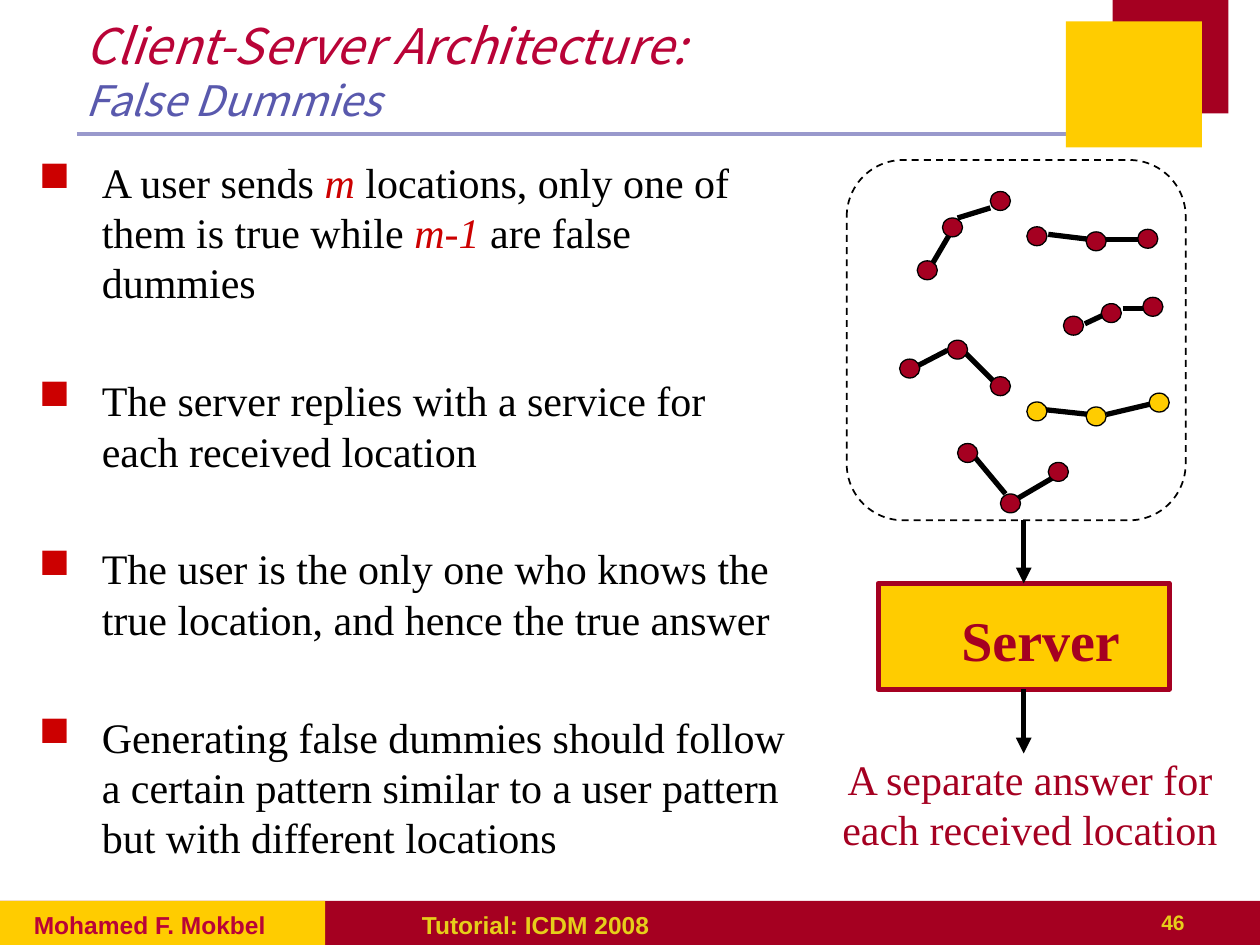
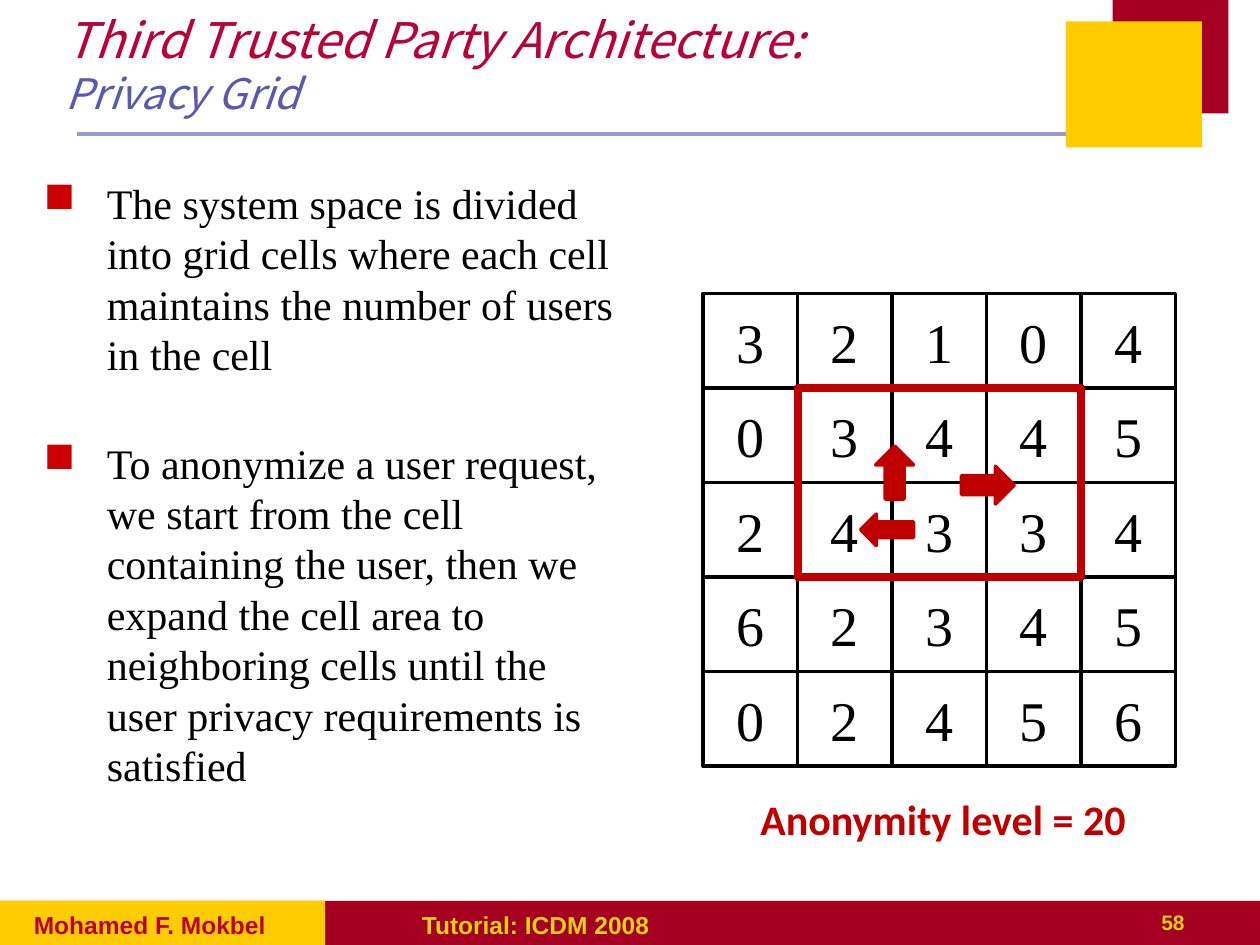
from dataclasses import dataclass
from typing import Optional

from lxml import etree
from pptx import Presentation
from pptx import util as u
from pptx.dml.color import RGBColor
from pptx.enum import dml, shapes, text
from pptx.oxml import ns

Inches, Pt = u.Inches, u.Pt
SHAPE, ALIGN, ANCHOR = shapes.MSO_SHAPE, text.PP_ALIGN, text.MSO_ANCHOR


@dataclass(frozen=True)
class Theme:
    crimson: str = "A50021"
    gold: str = "FFCC00"
    title: str = "B90337"
    subtitle: str = "5959AD"
    rule: str = "9999CC"
    footer: str = "E6CE1A"
    accent: str = "CC0000"
    cloak: str = "C00000"
    ink: str = "000000"
    title_font: str = "Noto Sans CJK KR"
    body_font: str = "Times New Roman"
    footer_font: str = "Arial"
    label_font: str = "Calibri"
    title_size: int = 28
    large_size: int = 32
    body_size: int = 24
    footer_size: int = 14
    number_size: int = 12


THEME = Theme()


@dataclass(frozen=True)
class Box:
    left: float
    top: float
    width: float
    height: float

    def lengths(self) -> list:
        return [Inches(v) for v in (self.left, self.top, self.width, self.height)]


@dataclass(frozen=True)
class Style:
    font: str
    size: int
    color: str
    bold: bool = False
    italic: bool = False


@dataclass(frozen=True)
class Stroke:
    color: str
    width: float
    dashed: bool = False


@dataclass(frozen=True)
class Trajectory:
    """Three reported positions (dot corners) and the two segments between them."""
    color: str
    dots: tuple
    segments: tuple


BODY = Style(THEME.body_font, THEME.body_size, THEME.ink)
VARIABLE = Style(THEME.body_font, THEME.body_size, THEME.accent, italic=True)
ANSWER = Style(THEME.body_font, THEME.body_size, THEME.crimson)
SERVER = Style(THEME.body_font, THEME.large_size, THEME.crimson, bold=True)
COUNT = Style(THEME.body_font, THEME.large_size, THEME.ink)
LEVEL = Style(THEME.label_font, THEME.body_size, THEME.cloak, bold=True)
TITLE = Style(THEME.title_font, THEME.title_size, THEME.title, italic=True)
SUBTITLE = Style(THEME.title_font, THEME.body_size, THEME.subtitle, italic=True)
AUTHOR = Style(THEME.footer_font, THEME.footer_size, THEME.title, bold=True)
VENUE = Style(THEME.footer_font, THEME.footer_size, THEME.footer, bold=True)
NUMBER = Style(THEME.footer_font, THEME.number_size, THEME.footer, bold=True)
PATH_STROKE = Stroke(THEME.ink, 3)

# Content
DUMMY_POINTS = [
    [("A user sends ", BODY), ("m", VARIABLE),
     (" locations, only one of them is true while ", BODY),
     ("m-1", VARIABLE), (" are false dummies", BODY)],
    [("The server replies with a service for each received location", BODY)],
    [("The user is the only one who knows the true location, "
      "and hence the true answer", BODY)],
    [("Generating false dummies should follow a certain pattern similar to "
      "a user pattern but with different locations", BODY)],
]
TRAJECTORIES = [
    Trajectory(THEME.crimson, ((7.28, 2.07), (7.48, 1.73), (7.86, 1.52)),
               ((7.39, 2.11, 7.56, 1.82), (7.6, 1.73, 7.86, 1.65))),
    Trajectory(THEME.crimson, ((8.15, 1.8), (8.62, 1.84), (9.03, 1.82)),
               ((8.32, 1.86, 8.65, 1.9), (8.74, 1.9, 9.07, 1.9))),
    Trajectory(THEME.crimson, ((8.44, 2.51), (8.74, 2.41), (9.07, 2.36)),
               ((8.61, 2.57, 8.78, 2.49), (8.91, 2.45, 9.07, 2.45))),
    Trajectory(THEME.crimson, ((7.14, 2.85), (7.52, 2.7), (7.86, 2.99)),
               ((7.27, 2.91, 7.52, 2.78), (7.6, 2.74, 7.9, 3.04))),
    Trajectory(THEME.gold, ((8.15, 3.19), (8.62, 3.23), (9.12, 3.12)),
               ((8.28, 3.25, 8.65, 3.29), (8.78, 3.29, 9.16, 3.2))),
    Trajectory(THEME.crimson, ((7.6, 3.52), (7.94, 3.92), (8.32, 3.67)),
               ((7.73, 3.62, 7.98, 3.92), (8.07, 3.96, 8.36, 3.79))),
]
GRID_POINTS = [
    (Box(0.25, 1.36, 4.8, 1.1),
     "The system space is divided into grid cells where each cell maintains "
     "the number of users in the cell"),
    (Box(0.25, 3.42, 4.8, 3.34),
     "To anonymize a user request, we start from the cell containing the user, "
     "then we expand the cell area to neighboring cells until the user privacy "
     "requirements is satisfied"),
]
USER_COUNTS = ["32104", "03445", "24334", "62345", "02456"]
EXPANSIONS = [(Box(6.83, 4.08, 0.42, 0.25), 0),
              (Box(6.89, 3.6, 0.42, 0.3), 90),
              (Box(7.63, 3.7, 0.42, 0.3), 180)]


# Drawing helpers
def style_run(run, style: Style) -> None:
    font = run.font
    font.name, font.size = style.font, Pt(style.size)
    font.bold, font.italic = style.bold, style.italic
    font.color.rgb = RGBColor.from_string(style.color)


def write(shape, words: str, style: Style, align=ALIGN.LEFT,
          anchor=ANCHOR.TOP, wrap: bool = True) -> None:
    frame = shape.text_frame
    frame.text = words
    frame.word_wrap, frame.vertical_anchor = wrap, anchor
    frame.paragraphs[0].alignment = align
    for run in frame.paragraphs[0].runs:
        style_run(run, style)


def add_label(slide, box: Box, words: str, style: Style, align=ALIGN.LEFT,
              wrap: bool = True) -> None:
    write(slide.shapes.add_textbox(*box.lengths()), words, style, align, wrap=wrap)


def add_figure(slide, kind, box: Box, fill: Optional[str] = None,
               stroke: Optional[Stroke] = None):
    figure = slide.shapes.add_shape(kind, *box.lengths())
    figure.shadow.inherit = False
    if fill:
        figure.fill.solid()
        figure.fill.fore_color.rgb = RGBColor.from_string(fill)
    else:
        figure.fill.background()
    if stroke:
        set_stroke(figure.line, stroke)
    else:
        figure.line.fill.background()
    return figure


def set_stroke(line, stroke: Stroke) -> None:
    line.color.rgb = RGBColor.from_string(stroke.color)
    line.width = Pt(stroke.width)
    if stroke.dashed:
        line.dash_style = dml.MSO_LINE.DASH


def add_line(slide, ends: tuple, stroke: Stroke, arrow: bool = False):
    line = slide.shapes.add_connector(shapes.MSO_CONNECTOR.STRAIGHT,
                                      *[Inches(v) for v in ends])
    set_stroke(line.line, stroke)
    properties = line.line._get_or_add_ln()
    if arrow:
        etree.SubElement(properties, ns.qn("a:tailEnd"), type="triangle")
    etree.SubElement(properties.getparent(), ns.qn("a:effectLst"))
    return line


def add_bullets(slide, box: Box, points: list, gap: float = 0) -> None:
    frame = slide.shapes.add_textbox(*box.lengths()).text_frame
    frame.word_wrap = True
    for index, pieces in enumerate(points):
        paragraph = frame.add_paragraph() if index else frame.paragraphs[0]
        if index:
            paragraph.space_before = Pt(gap)
        properties = paragraph._p.get_or_add_pPr()
        properties.set("marL", str(Inches(0.5)))
        properties.set("indent", str(-Inches(0.5)))
        color = etree.SubElement(properties, ns.qn("a:buClr"))
        etree.SubElement(color, ns.qn("a:srgbClr"), val=THEME.accent)
        etree.SubElement(properties, ns.qn("a:buChar"), char="■")
        for words, style in pieces:
            run = paragraph.add_run()
            run.text = words
            style_run(run, style)


def add_frame(deck, title_box: Box, title: str, subtitle: str, number: int):
    """Start a slide with the shared rule, bands, corner squares, title and footer."""
    slide = deck.slides.add_slide(deck.slide_layouts[6])
    add_line(slide, (0.61, 1.06, 8.53, 1.06), Stroke(THEME.rule, 2.25))
    for box, color in ((Box(0, 7.15, 10, 0.35), THEME.crimson),
                       (Box(0, 7.15, 2.58, 0.35), THEME.gold),
                       (Box(8.83, 0, 0.92, 0.9), THEME.crimson),
                       (Box(8.46, 0.17, 1.08, 1), THEME.gold)):
        add_figure(slide, SHAPE.RECTANGLE, box, color)

    heading = slide.shapes.add_textbox(*title_box.lengths())
    write(heading, f"{title}\v{subtitle}", TITLE, anchor=ANCHOR.MIDDLE)
    style_run(heading.text_frame.paragraphs[0].runs[-1], SUBTITLE)

    add_label(slide, Box(7.42, 7.17, 2.08, 0.33), str(number), NUMBER, ALIGN.RIGHT)
    add_label(slide, Box(3.25, 7.17, 4.67, 0.33), "Tutorial: ICDM 2008", VENUE)
    author = add_figure(slide, SHAPE.RECTANGLE, Box(0.17, 7.17, 2.33, 0.25), THEME.gold)
    write(author, "Mohamed F. Mokbel", AUTHOR)
    return slide


# Slides
def build_false_dummies(deck) -> None:
    slide = add_frame(deck, Box(0.58, 0.14, 7.67, 0.83),
                      "Client-Server Architecture:", "False Dummies", 46)
    add_bullets(slide, Box(0.21, 1.19, 6.13, 5.9), DUMMY_POINTS, gap=38.5)

    # Reported locations
    for trajectory in TRAJECTORIES:
        for segment in trajectory.segments:
            add_line(slide, segment, PATH_STROKE)
        for left, top in trajectory.dots:
            add_figure(slide, SHAPE.OVAL, Box(left, top, 0.16, 0.15),
                       trajectory.color, Stroke(THEME.ink, 0.75))
    add_figure(slide, SHAPE.ROUNDED_RECTANGLE, Box(6.72, 1.27, 2.69, 2.86),
               stroke=Stroke(THEME.ink, 1, dashed=True))

    # Server and its answer
    server_box = Box(6.97, 4.63, 2.31, 0.84)
    server = add_figure(slide, SHAPE.RECTANGLE, server_box, THEME.gold,
                        Stroke(THEME.crimson, 3))
    add_label(slide, Box(7.23, 4.76, 2.06, 0.63), "Server", SERVER, ALIGN.CENTER)
    middle = server_box.left + server_box.width / 2
    request = add_line(slide, (middle, 4.13, middle, 4.63), PATH_STROKE, arrow=True)
    request.end_connect(server, 0)
    reply = add_line(slide, (middle, 5.47, middle, 5.98), PATH_STROKE, arrow=True)
    reply.begin_connect(server, 2)
    add_label(slide, Box(6.39, 5.93, 3.57, 0.9),
              "A separate answer for each received location", ANSWER, ALIGN.CENTER)


def build_privacy_grid(deck) -> None:
    slide = add_frame(deck, Box(0.42, -0.12, 10, 1.25),
                      "Third Trusted Party Architecture:", "Privacy Grid", 58)
    for box, words in GRID_POINTS:
        add_bullets(slide, box, [[(words, BODY)]])

    # Users per cell
    left, top, side = 5.58, 2.33, 0.75
    for row, counts in enumerate(USER_COUNTS):
        for column, count in enumerate(counts):
            cell = add_figure(slide, SHAPE.RECTANGLE,
                              Box(left + column * side, top + row * side, side, side),
                              stroke=Stroke(THEME.ink, 2))
            write(cell, count, COUNT, ALIGN.CENTER, ANCHOR.MIDDLE)

    # Expansion to the cloaked area
    for box, angle in EXPANSIONS:
        arrow = add_figure(slide, SHAPE.LEFT_ARROW, box, THEME.cloak,
                           Stroke(THEME.cloak, 2))
        arrow.rotation = angle
    add_figure(slide, SHAPE.RECTANGLE, Box(left + side, top + side, 3 * side, 2 * side),
               stroke=Stroke(THEME.cloak, 4.5))
    add_label(slide, Box(5.92, 6.25, 3.13, 0.51), "Anonymity level = 20", LEVEL,
              ALIGN.CENTER, wrap=False)


def main() -> None:
    deck = Presentation()
    deck.slide_width, deck.slide_height = Inches(10), Inches(7.5)
    build_false_dummies(deck)
    build_privacy_grid(deck)
    deck.save("out.pptx")


if __name__ == "__main__":
    main()
